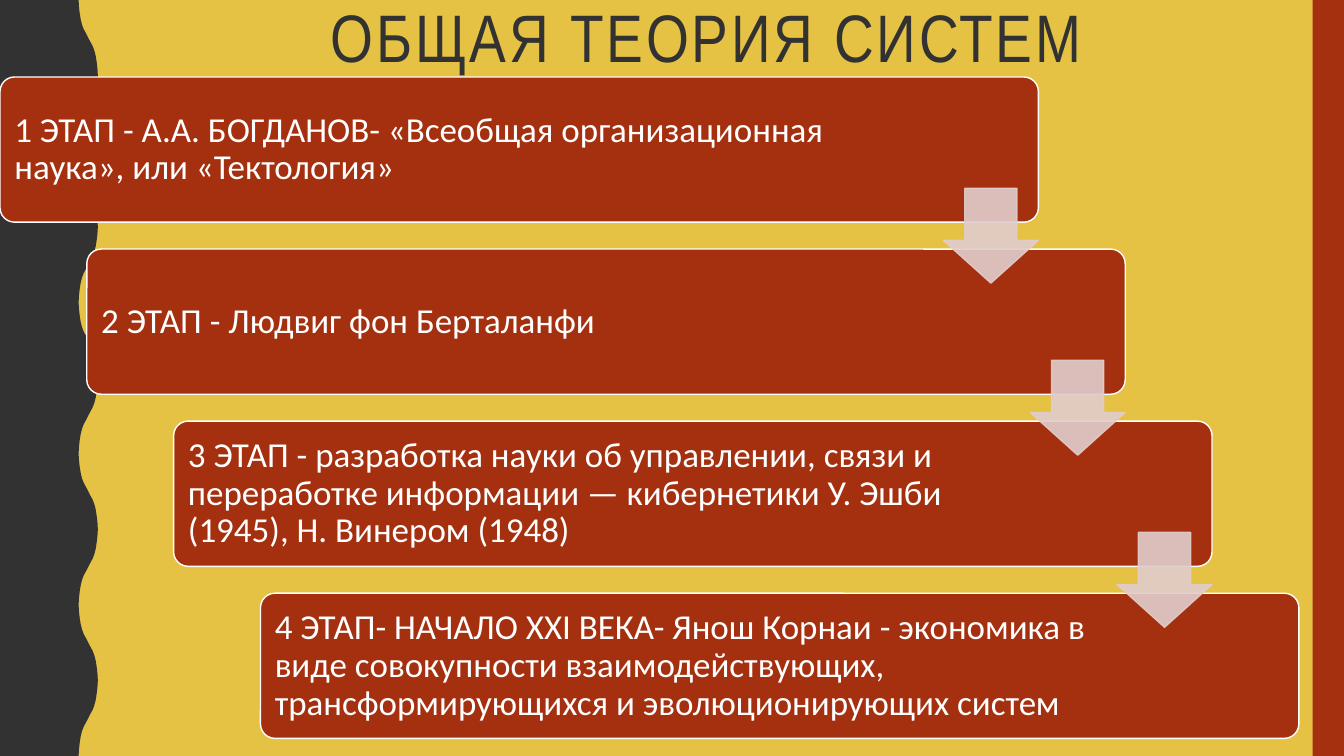
from dataclasses import dataclass

from lxml.etree import SubElement
from pptx import Presentation
from pptx.dml.color import RGBColor
from pptx.enum.shapes import MSO_SHAPE
from pptx.enum.text import MSO_ANCHOR, PP_ALIGN
from pptx.oxml.ns import qn
from pptx.shapes.autoshape import Shape
from pptx.slide import Slide
from pptx.util import Inches, Pt

WIDTH, HEIGHT = Inches(13.33), Inches(7.5)
COLORS = {"mustard": "E5C243", "charcoal": "323232", "rust": "A5300F",
          "white": "FFFFFF", "blush": "E1CDCC"}
STAIR_X, STAIR_Y = 6.46, 22.76
FIRST_TOP = 10.19
CARD_W, CARD_H = 77.26, 19.2
HALF_WAVES = 10
TROUGH, CREST = 5.85, 7.28
WAVE_RISE = [(0, 0), (0.09, 0.02), (0.18, 0.06), (0.26, 0.11),
             (0.33, 0.18), (0.39, 0.27), (0.44, 0.38), (0.5, 0.5)]


@dataclass(frozen=True)
class Box:
    """Position and size in percent of the slide's width and height."""

    left: float
    top: float
    width: float
    height: float

    def emu(self) -> tuple[int, int, int, int]:
        """Convert the percentages to slide lengths."""
        return (across(self.left), down(self.top),
                across(self.width), down(self.height))


@dataclass(frozen=True)
class Stage:
    """One step of the staircase."""

    text: str
    text_width: float = 63.2


STAGES = [
    Stage("1 ЭТАП - А.А. БОГДАНОВ- «Всеобщая организационная наука», "
          "или «Тектология»", 64.65),
    Stage("2 ЭТАП - Людвиг фон Берталанфи"),
    Stage("3 ЭТАП - разработка науки об управлении, связи и переработке "
          "информации — кибернетики У. Эшби (1945), Н. Винером (1948)"),
    Stage("4 ЭТАП- НАЧАЛО XXI ВЕКА- Янош Корнаи - экономика в виде совокупности "
          "взаимодействующих, трансформирующихся и эволюционирующих систем"),
]


def across(percent: float) -> int:
    """Turn a share of the slide's width into a length."""
    return round(WIDTH * percent / 100)


def down(percent: float) -> int:
    """Turn a share of the slide's height into a length."""
    return round(HEIGHT * percent / 100)


def rgb(color: str) -> RGBColor:
    """Look up a named colour."""
    return RGBColor.from_string(COLORS[color])


def paint(shape: Shape, fill: str, line: str | None = None,
          opacity: int = 100) -> None:
    """Set fill, outline and opacity, and drop the shadow."""
    shape.shadow.inherit = False
    shape.fill.solid()
    shape.fill.fore_color.rgb = rgb(fill)
    if line:
        shape.line.color.rgb = rgb(line)
        shape.line.width = Pt(1)
    else:
        shape.line.fill.background()
    if opacity < 100:
        for tint in shape._element.spPr.iter(qn("a:srgbClr")):
            SubElement(tint, qn("a:alpha")).set("val", str(opacity * 1000))


def add_block(slide: Slide, kind: MSO_SHAPE, box: Box, fill: str,
              line: str | None = None, opacity: int = 100,
              adjust: tuple[float, ...] = ()) -> None:
    """Draw one preset shape."""
    block = slide.shapes.add_shape(kind, *box.emu())
    for index, value in enumerate(adjust):
        block.adjustments[index] = value
    paint(block, fill, line, opacity)


def add_text(slide: Slide, text: str, box: Box, *, size: float, font: str,
             color: str, align: PP_ALIGN = PP_ALIGN.LEFT,
             anchor: MSO_ANCHOR = MSO_ANCHOR.MIDDLE, inset: float = 0.1,
             tracking: int = 0) -> None:
    """Write one wrapped paragraph in the given format."""
    frame = slide.shapes.add_textbox(*box.emu()).text_frame
    frame.word_wrap = True
    frame.vertical_anchor = anchor
    frame.margin_left = frame.margin_right = Inches(inset)
    frame.margin_top = frame.margin_bottom = Inches(inset)
    paragraph = frame.paragraphs[0]
    paragraph.alignment = align
    paragraph.line_spacing = 0.9
    run = paragraph.add_run()
    run.text = text
    run.font.size = Pt(size)
    run.font.name = font
    run.font.color.rgb = rgb(color)
    if tracking:
        run.font._element.set("spc", str(tracking * 100))


def add_wavy_edge(slide: Slide) -> None:
    """Draw the dark left band with its regular wave."""
    profile = WAVE_RISE + [(1 - t, 1 - rise) for t, rise in WAVE_RISE[-2::-1]]
    half = 100 / HALF_WAVES
    edge = []
    for index in range(HALF_WAVES):
        for t, rise in profile:
            reach = 1 - rise if index % 2 else rise
            edge.append((across(TROUGH + (CREST - TROUGH) * reach),
                         down((index + t) * half)))
    outline = slide.shapes.build_freeform(0, 0)
    outline.add_line_segments(edge + [(0, HEIGHT)], close=True)
    paint(outline.convert_to_shape(), "charcoal")


def add_stage(slide: Slide, stage: Stage, index: int) -> None:
    """Draw one card and its text."""
    left, top = index * STAIR_X, FIRST_TOP + index * STAIR_Y
    add_block(slide, MSO_SHAPE.ROUNDED_RECTANGLE, Box(left, top, CARD_W, CARD_H),
              "rust", "white", adjust=(0.1,))
    add_text(slide, stage.text,
             Box(left + 0.33, top + 0.57, stage.text_width, 18.1),
             size=25, font="Calibri", color="white")


def main() -> None:
    """Build and save the slide."""
    deck = Presentation()
    deck.slide_width, deck.slide_height = WIDTH, HEIGHT
    slide = deck.slides.add_slide(deck.slide_layouts[6])
    slide.background.fill.solid()
    slide.background.fill.fore_color.rgb = rgb("mustard")
    add_wavy_edge(slide)
    add_block(slide, MSO_SHAPE.RECTANGLE, Box(97.67, 0, 2.33, 100), "rust")
    add_text(slide, "ОБЩАЯ ТЕОРИЯ СИСТЕМ", Box(13.2, 0, 78.77, 15.33),
             size=48, font="Arial Narrow", color="charcoal",
             align=PP_ALIGN.CENTER, anchor=MSO_ANCHOR.TOP, inset=0.05, tracking=2)
    for index, stage in enumerate(STAGES):
        add_stage(slide, stage, index)
    for index in range(len(STAGES) - 1):
        add_block(slide, MSO_SHAPE.DOWN_ARROW,
                  Box(70.2 + index * STAIR_X, 24.9 + index * STAIR_Y, 7.06, 12.55),
                  "blush", "blush", opacity=90, adjust=(0.55, 0.45))
    deck.save("out.pptx")


if __name__ == "__main__":
    main()
